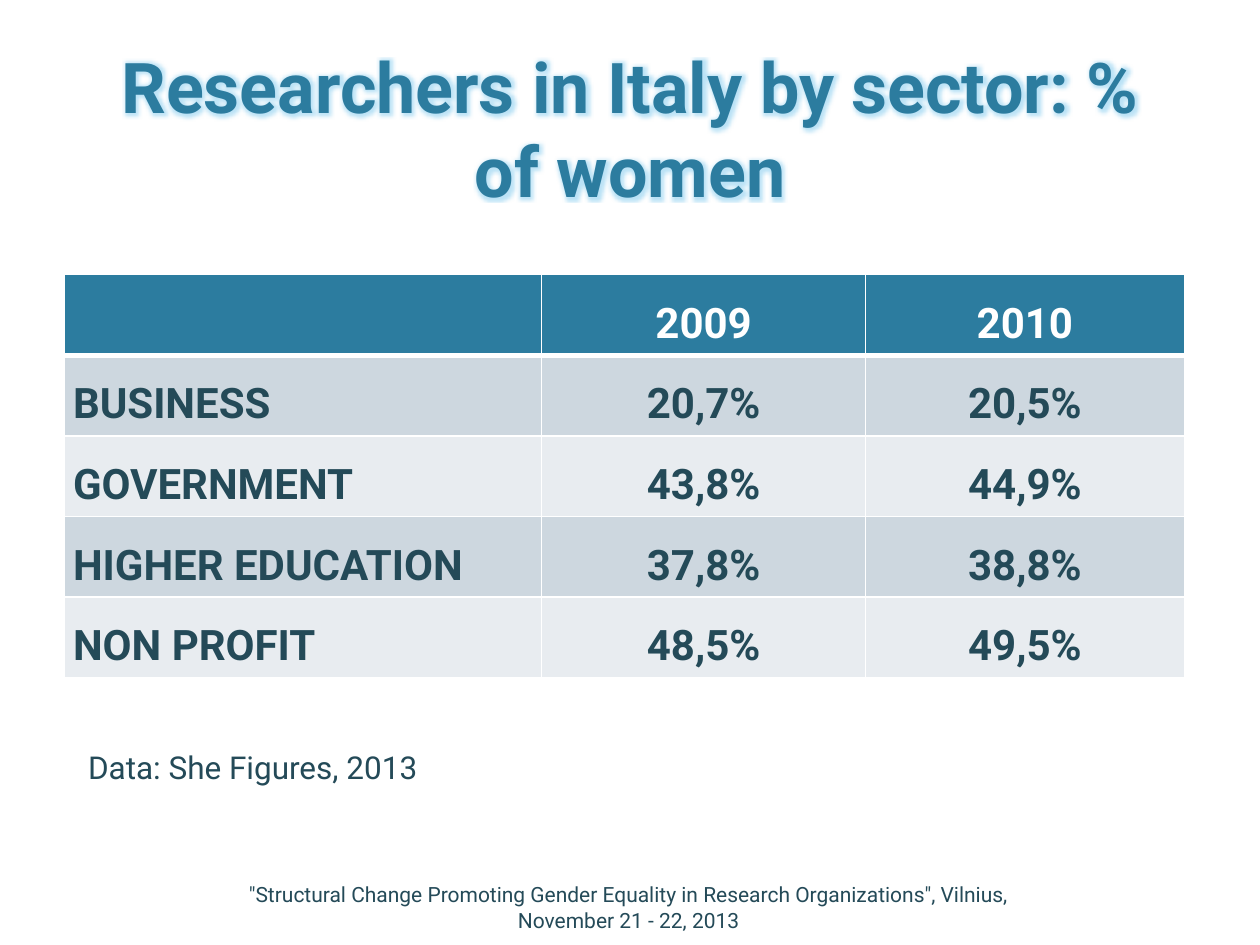
import pptx
import pptx.util
import pptx.dml.color
import pptx.enum.text
import pptx.oxml
import pptx.oxml.ns

COLORS = {
    "accent": "2C7C9F",
    "ink": "244A58",
    "white": "FFFFFF",
    "band_dark": "CDD7DF",
    "band_light": "E8ECF0",
    "glow": "8FD0F0",
}
FONT = "Roboto"
ALIGN = pptx.enum.text.PP_ALIGN
ANCHOR = pptx.enum.text.MSO_ANCHOR
FIT = pptx.enum.text.MSO_AUTO_SIZE
Inches = pptx.util.Inches

SECTORS = [
    ("", "2009", "2010"),
    ("BUSINESS", "20,7%", "20,5%"),
    ("GOVERNMENT", "43,8%", "44,9%"),
    ("HIGHER EDUCATION", "37,8%", "38,8%"),
    ("NON PROFIT", "48,5%", "49,5%"),
]
COLUMN_WIDTHS = (3.79, 2.57, 2.53)


def rgb(name):
    return pptx.dml.color.RGBColor.from_string(COLORS[name])


def add_span(para, text, size, color, bold=False):
    span = para.add_run()
    span.text = text
    span.font.size = pptx.util.Pt(size)
    span.font.bold = bold
    span.font.name = FONT
    span.font.color.rgb = rgb(color)
    return span


def add_glow(span):
    effect = pptx.oxml.parse_xml(
        f'<a:effectLst {pptx.oxml.ns.nsdecls("a")}><a:glow rad="63500">'
        f'<a:srgbClr val="{COLORS["glow"]}"><a:alpha val="60000"/></a:srgbClr>'
        "</a:glow></a:effectLst>"
    )
    fill = span.font._element.find(pptx.oxml.ns.qn("a:solidFill"))
    fill.addnext(effect)


def place_title(page, box):
    title = page.shapes.title
    title.left, title.top, title.width, title.height = map(Inches, box)
    frame = title.text_frame
    frame.word_wrap = True
    frame.auto_size = FIT.NONE
    frame.vertical_anchor = ANCHOR.BOTTOM
    para = frame.paragraphs[0]
    para.alignment = ALIGN.CENTER
    add_glow(add_span(para, "Researchers in Italy by sector: % of women", 40, "accent", True))


def set_borders(cell, bottom):
    properties = cell._tc.get_or_add_tcPr()
    for side, points in (("L", 1), ("R", 1), ("T", 1), ("B", bottom)):
        properties.append(pptx.oxml.parse_xml(
            f'<a:ln{side} {pptx.oxml.ns.nsdecls("a")} w="{points * 12700}">'
            f'<a:solidFill><a:srgbClr val="{COLORS["white"]}"/></a:solidFill></a:ln{side}>'
        ))


def fill_cell(cell, text, header, fill, alignment):
    set_borders(cell, 3 if header else 1)
    cell.fill.solid()
    cell.fill.fore_color.rgb = rgb(fill)
    cell.margin_left = cell.margin_right = Inches(0.07)
    cell.margin_top = cell.margin_bottom = 0
    if text:
        para = cell.text_frame.paragraphs[0]
        para.alignment = alignment
        para.line_spacing = 1.5
        add_span(para, text, 24, "white" if header else "ink", True)


def place_table(page, box):
    table = page.shapes.add_table(
        len(SECTORS), len(COLUMN_WIDTHS), *map(Inches, box)
    ).table
    for column, width in zip(table.columns, COLUMN_WIDTHS):
        column.width = Inches(width)
    for r, values in enumerate(SECTORS):
        table.rows[r].height = Inches(box[3] / len(SECTORS))
        header = r == 0
        fill = "accent" if header else ("band_light", "band_dark")[r % 2]
        for c, text in enumerate(values):
            alignment = ALIGN.CENTER if c else ALIGN.JUSTIFY
            fill_cell(table.cell(r, c), text, header, fill, alignment)


def place_note(page, box, text, size, alignment, anchor, wrap):
    frame = page.shapes.add_textbox(*map(Inches, box)).text_frame
    frame.word_wrap = wrap
    frame.auto_size = FIT.NONE if wrap else FIT.SHAPE_TO_FIT_TEXT
    frame.vertical_anchor = anchor
    para = frame.paragraphs[0]
    para.alignment = alignment
    add_span(para, text, size, "ink")


def main():
    deck = pptx.Presentation()
    deck.slide_width, deck.slide_height = Inches(10), Inches(7.5)
    page = deck.slides.add_slide(deck.slide_layouts[5])
    place_title(page, (0.6, 0.27, 8.8, 1.46))
    place_table(page, (0.51, 2.18, sum(COLUMN_WIDTHS), 3.2))
    place_note(
        page, (1.75, 7, 6.48, 0.4),
        '"Structural Change Promoting Gender Equality in Research Organizations", '
        "Vilnius, November 21 - 22, 2013",
        12, ALIGN.CENTER, ANCHOR.MIDDLE, True,
    )
    place_note(
        page, (0.6, 5.89, 3.11, 0.4), "Data: She Figures, 2013",
        18, ALIGN.LEFT, ANCHOR.TOP, False,
    )
    deck.save("out.pptx")


if __name__ == "__main__":
    main()
